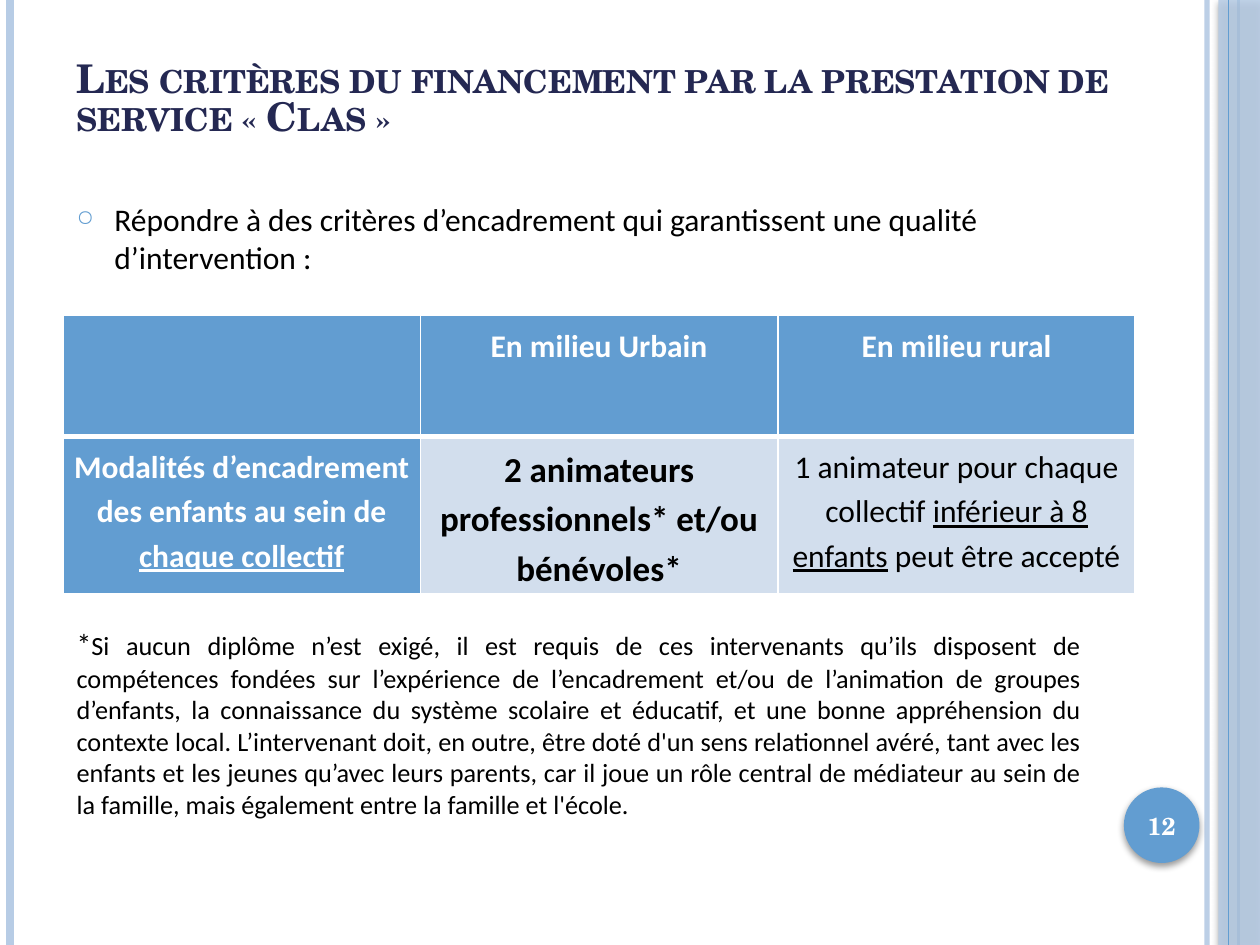
from lxml import etree
from pptx import Presentation
from pptx.dml.color import RGBColor
from pptx.enum.shapes import MSO_CONNECTOR, MSO_SHAPE
from pptx.enum.text import MSO_ANCHOR, PP_ALIGN
from pptx.oxml.ns import qn
from pptx.util import Inches, Pt

STRAIGHT = MSO_CONNECTOR.STRAIGHT
RECTANGLE, OVAL = MSO_SHAPE.RECTANGLE, MSO_SHAPE.OVAL
TOP, MIDDLE, BOTTOM = MSO_ANCHOR.TOP, MSO_ANCHOR.MIDDLE, MSO_ANCHOR.BOTTOM
LEFT, CENTER, JUSTIFY = PP_ALIGN.LEFT, PP_ALIGN.CENTER, PP_ALIGN.JUSTIFY

WIDTH, HEIGHT = Inches(10), Inches(7.5)
BODY_FONT, HEADING_FONT = "Calibri", "TeX Gyre Schola"
BLUE, PALE_BLUE, CELL_BLUE, NAVY = "629DD1", "B7CCE5", "D2DEED", "242852"
WHITE, BLACK = "FFFFFF", "000000"


def color(hex_code):
    return RGBColor.from_string(hex_code)


def place(left, top, width, height):
    """Turn percentages of the slide into lengths."""
    return (int(WIDTH * left / 100), int(HEIGHT * top / 100),
            int(WIDTH * width / 100), int(HEIGHT * height / 100))


def add_xml(parent, tag, **attributes):
    return etree.SubElement(parent, qn(tag), attributes)


def set_alpha(fill_owner, percent):
    for rgb in fill_owner.iter(qn("a:srgbClr")):
        add_xml(rgb, "a:alpha", val=str(percent * 1000))


def add_run(paragraph, text, size, hex_code=BLACK, font=BODY_FONT,
            bold=False, underline=False):
    run = paragraph.add_run()
    run.text = text
    run.font.size, run.font.name = Pt(size), font
    run.font.bold, run.font.underline = bold, underline
    run.font.color.rgb = color(hex_code)
    return run


def add_text_area(slide, box, anchor=TOP, align=LEFT):
    frame = slide.shapes.add_textbox(*place(*box)).text_frame
    frame.word_wrap = True
    frame.vertical_anchor = anchor
    paragraph = frame.paragraphs[0]
    paragraph.alignment = align
    return paragraph


def add_rule(slide, x, hex_code, weight, alpha=100):
    left, top, _, height = place(x, 0, 0, 100)
    rule = slide.shapes.add_connector(STRAIGHT, left, top, left, top + height)
    rule.line.color.rgb = color(hex_code)
    rule.line.width = Pt(weight)
    properties = rule._element.spPr
    if alpha < 100:
        set_alpha(properties, alpha)
    add_xml(properties, "a:effectLst")


def add_shaded_shape(slide, kind, box, hex_code, alpha=100):
    shape = slide.shapes.add_shape(kind, *place(*box))
    shape.fill.solid()
    shape.fill.fore_color.rgb = color(hex_code)
    shape.line.fill.background()
    shape.shadow.inherit = False
    properties = shape._element.spPr
    if alpha < 100:
        set_alpha(properties, alpha)
    # Soft shadow straight below
    shadow = add_xml(properties.find(qn("a:effectLst")), "a:outerShdw",
                     blurRad=str(Pt(4)), dist=str(Pt(2)), dir="5400000",
                     rotWithShape="0")
    add_xml(add_xml(shadow, "a:srgbClr", val=BLACK), "a:alpha", val="40000")


def add_side_bands(slide):
    add_rule(slide, 95.8, PALE_BLUE, 3, alpha=93)
    add_rule(slide, 0.8, PALE_BLUE, 4.5)
    add_rule(slide, 98.3, BLUE, 1.5)
    add_shaded_shape(slide, RECTANGLE, (96.7, 0, 3.3, 100), PALE_BLUE, alpha=87)
    add_rule(slide, 97.5, BLUE, 0.75)


def add_title(slide, box):
    title = add_text_area(slide, box, BOTTOM)
    title.line_spacing = 0.8
    run = add_run(title, "Les critères du financement par la prestation de "
                  "service « Clas »", 22.6, NAVY, HEADING_FONT, bold=True)
    run._r.get_or_add_rPr().set("cap", "small")


def add_criterion(slide, box):
    criterion = add_text_area(slide, box)
    properties = criterion._p.get_or_add_pPr()
    properties.set("marL", str(Inches(0.3)))
    properties.set("indent", str(-Inches(0.3)))
    add_xml(add_xml(properties, "a:buClr"), "a:srgbClr", val=BLUE)
    add_xml(properties, "a:buSzPct", val="70000")
    add_xml(properties, "a:buChar", char="○")
    add_run(criterion, "Répondre à des critères d’encadrement qui garantissent "
            "une qualité d’intervention :", 18)


def style_cell(cell, fill, weights):
    properties = cell._tc.get_or_add_tcPr()
    for side, weight in zip(("L", "R", "T", "B"), weights):
        border = add_xml(properties, f"a:ln{side}", w=str(Pt(weight)))
        add_xml(add_xml(border, "a:solidFill"), "a:srgbClr", val=WHITE)
    cell.fill.solid()
    cell.fill.fore_color.rgb = color(fill)
    cell.margin_left = cell.margin_right = Inches(0.07)
    cell.margin_top = cell.margin_bottom = Inches(0.05)


def add_staffing_table(slide, box):
    # Each cell: text size, bold, then (text, underlined) runs
    rows = [
        [(18, True, []),
         (18, True, [("En milieu Urbain", False)]),
         (18, True, [("En milieu rural", False)])],
        [(18, True, [("Modalités d’encadrement des enfants au sein de ", False),
                     ("chaque collectif", True)]),
         (20, True, [("2 animateurs professionnels* et/ou bénévoles*", False)]),
         (18, False, [("1 animateur pour chaque collectif ", False),
                      ("inférieur à 8 enfants", True),
                      (" peut être accepté", False)])],
    ]
    table = slide.shapes.add_table(2, 3, *place(*box)).table
    for row, share in zip(table.rows, (0.46, 0.54)):
        row.height = int(HEIGHT * box[3] / 100 * share)
    thin, thick = 0.96, 3
    for r, row in enumerate(rows):
        edges = (thin, thin, thick, thin) if r else (thin, thin, thin, thick)
        for c, (size, bold, runs) in enumerate(row):
            heading = r == 0 or c == 0
            cell = table.cell(r, c)
            style_cell(cell, BLUE if heading else CELL_BLUE, edges)
            paragraph = cell.text_frame.paragraphs[0]
            paragraph.alignment = CENTER
            paragraph.line_spacing = 1.15
            for text, underline in runs:
                add_run(paragraph, text, size, WHITE if heading else BLACK,
                        bold=bold, underline=underline)


def add_footnote(slide, box):
    note = add_text_area(slide, box, align=JUSTIFY)
    add_run(note, "*", 17)
    add_run(note, "Si aucun diplôme n’est exigé, il est requis de ces "
            "intervenants qu’ils disposent de compétences fondées sur "
            "l’expérience de l’encadrement et/ou de l’animation de groupes "
            "d’enfants, la connaissance du système scolaire et éducatif, et "
            "une bonne appréhension du contexte local. L’intervenant doit, en "
            "outre, être doté d'un sens relationnel avéré, tant avec les "
            "enfants et les jeunes qu’avec leurs parents, car il joue un rôle "
            "central de médiateur au sein de la famille, mais également entre "
            "la famille et l'école.", 15)


def add_page_badge(slide, box):
    left, top, width, height = box
    add_shaded_shape(slide, OVAL, box, BLUE)
    # The number's area is slightly wider than the disc
    number = add_text_area(slide, (left - 0.35, top, width + 0.7, height),
                           MIDDLE, CENTER)
    add_run(number, "12", 14, WHITE, HEADING_FONT, bold=True)


def main():
    deck = Presentation()
    deck.slide_width, deck.slide_height = WIDTH, HEIGHT
    slide = deck.slides.add_slide(deck.slide_layouts[6])
    add_side_bands(slide)
    add_title(slide, (5.1, 5.87, 85.8, 9.47))
    add_criterion(slide, (5.1, 20.53, 81.7, 10))
    add_staffing_table(slide, (5, 33.33, 85.1, 28))
    add_footnote(slide, (5.1, 65.6, 81.7, 22.67))
    add_page_badge(slide, (89.2, 83.33, 6, 8))
    deck.save("out.pptx")


if __name__ == "__main__":
    main()
